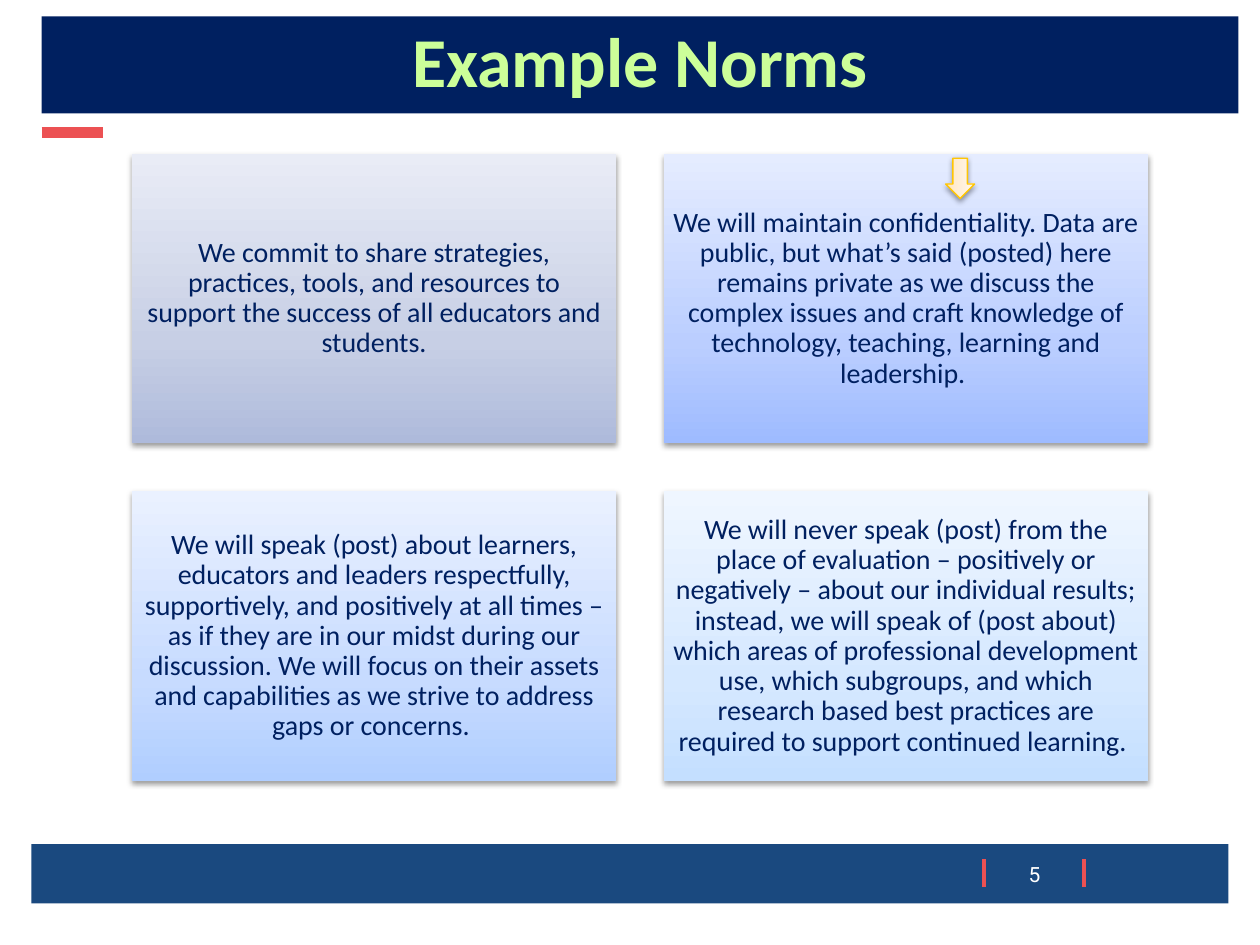
from lxml.etree import SubElement
from pptx import Presentation
from pptx.dml.color import RGBColor
from pptx.enum.shapes import MSO_CONNECTOR, MSO_SHAPE
from pptx.enum.text import MSO_ANCHOR, PP_ALIGN
from pptx.oxml.ns import qn
from pptx.util import Inches, Pt

NAVY, BLUE, RED, LIME, WHITE, GOLD = (
    "002060", "1A497F", "EC5153", "CCFF99", "FFFFFF", "FFC603")


def rgb(value):
    return RGBColor.from_string(value)


class Deck:
    font = "Calibri"
    stops = (0, 35, 100)

    def __init__(self, slide):
        self.slide = slide

    def shape(self, kind, x, y, w, h, fill, line=None):
        """Add a shape; a tuple of colours gives a gradient with a shadow."""
        sp = self.slide.shapes.add_shape(
            kind, Inches(x), Inches(y), Inches(w), Inches(h))
        sp.shadow.inherit = False
        if line:
            sp.line.color.rgb = rgb(line)
            sp.line.width = Pt(0.75)
        else:
            sp.line.fill.background()
        if isinstance(fill, tuple):
            self.gradient(sp, fill)
            self.shadow(sp)
        else:
            sp.fill.solid()
            sp.fill.fore_color.rgb = rgb(fill)
        return sp

    def gradient(self, sp, colors):
        sp.fill.gradient()
        sp.fill.gradient_angle = 90
        gs_list = sp._element.spPr.find(qn("a:gradFill")).find(qn("a:gsLst"))
        for gs in list(gs_list):
            gs_list.remove(gs)
        for stop, color in zip(self.stops, colors):
            gs = SubElement(gs_list, qn("a:gs"), pos=str(stop * 1000))
            SubElement(gs, qn("a:srgbClr"), val=color)

    def shadow(self, sp):
        effects = sp._element.spPr.find(qn("a:effectLst"))
        outer = SubElement(effects, qn("a:outerShdw"), blurRad=str(Pt(3.1)),
                           dist=str(Pt(1.6)), dir="5400000", rotWithShape="0")
        color = SubElement(outer, qn("a:srgbClr"), val="000000")
        SubElement(color, qn("a:alpha"), val="38000")

    def text(self, sp, text, size, color, font=None, bold=False,
             spacing=0.9, inset=(0.1, 0.05)):
        tf = sp.text_frame
        tf.word_wrap = True
        tf.vertical_anchor = MSO_ANCHOR.MIDDLE
        tf.margin_left = tf.margin_right = Inches(inset[0])
        tf.margin_top = tf.margin_bottom = Inches(inset[1])
        p = tf.paragraphs[0]
        p.text = text
        p.alignment = PP_ALIGN.CENTER
        p.line_spacing = spacing
        p.font.name = font or self.font
        p.font.size = Pt(size)
        p.font.bold = bold
        p.font.color.rgb = rgb(color)

    def textbox(self, x, y, w, h, text, size, color, **style):
        sp = self.slide.shapes.add_textbox(
            Inches(x), Inches(y), Inches(w), Inches(h))
        self.text(sp, text, size, color, **style)

    def line(self, x1, y1, x2, y2, color, width):
        cn = self.slide.shapes.add_connector(
            MSO_CONNECTOR.STRAIGHT, Inches(x1), Inches(y1), Inches(x2), Inches(y2))
        cn.line.color.rgb = rgb(color)
        cn.line.width = Pt(width)
        SubElement(cn._element.spPr, qn("a:effectLst"))


NORMS = [
    ("We commit to share strategies, practices, tools, and resources to support "
     "the success of all educators and students.",
     ("AEBADB", "C7CFE5", "E9ECF6")),
    ("We will maintain confidentiality. Data are public, but what’s said (posted) "
     "here remains private as we discuss the complex issues and craft knowledge of "
     "technology, teaching, learning and leadership. ",
     ("9EBBFF", "BBCEFF", "E5ECFF")),
    ("We will speak (post) about learners, educators and leaders respectfully, "
     "supportively, and positively at all times – as if they are in our midst "
     "during our discussion. We will focus on their assets and capabilities as we "
     "strive to address gaps or concerns. ",
     ("B0CEFF", "C7DBFF", "EAF1FF")),
    ("We will never speak (post) from the place of evaluation – positively or "
     "negatively – about our individual results; instead, we will speak of (post "
     "about) which areas of professional development use, which subgroups, and "
     "which research based best practices are required to support continued "
     "learning. ",
     ("C4DFFF", "D5E8FF", "EFF6FF")),
]


def main():
    prs = Presentation()
    prs.slide_width, prs.slide_height = Inches(10), Inches(7.5)
    s = Deck(prs.slides.add_slide(prs.slide_layouts[6]))

    # Title accent and footer bar
    s.line(0.33, 1.05, 0.82, 1.05, RED, 6)
    s.shape(MSO_SHAPE.RECTANGLE, 0.25, 6.7, 9.5, 0.47, BLUE)
    for x in (7.81, 8.6):
        s.line(x, 6.82, x, 7.04, RED, 2.25)

    # Title and slide number
    title = s.shape(MSO_SHAPE.RECTANGLE, 0.33, 0.13, 9.5, 0.77, NAVY)
    s.text(title, "Example Norms", 40, LIME, bold=True)
    s.textbox(7.97, 6.75, 0.48, 0.37, "5", 12, WHITE, font="Roboto", spacing=1.0)

    # Two by two grid of norms
    card_w, card_h, gap = 3.84, 2.3, 0.38
    for i, (text, colors) in enumerate(NORMS):
        row, col = divmod(i, 2)
        card = s.shape(MSO_SHAPE.RECTANGLE, 1.05 + col * (card_w + gap),
                       1.22 + row * (card_h + gap), card_w, card_h, colors)
        s.text(card, text, 16, NAVY, inset=(0.07, 0.07))

    # Arrow pointing down at the confidentiality norm
    arrow = s.shape(MSO_SHAPE.RIGHT_ARROW, 7.46, 1.3, 0.32, 0.23,
                    ("FFE5BD", "FFECD1", "FFF8EE"), GOLD)
    arrow.rotation = 90

    prs.save("out.pptx")


if __name__ == "__main__":
    main()
